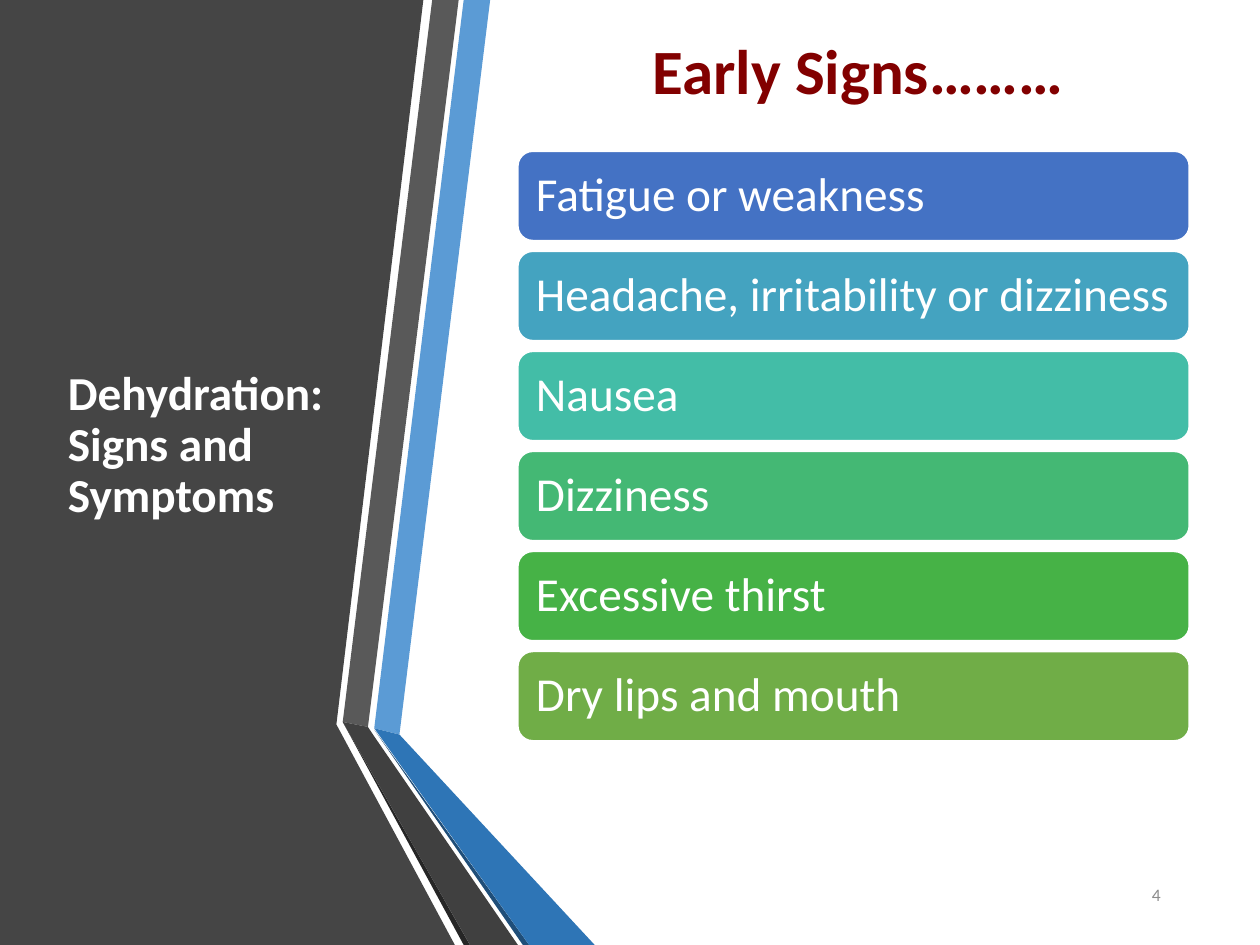
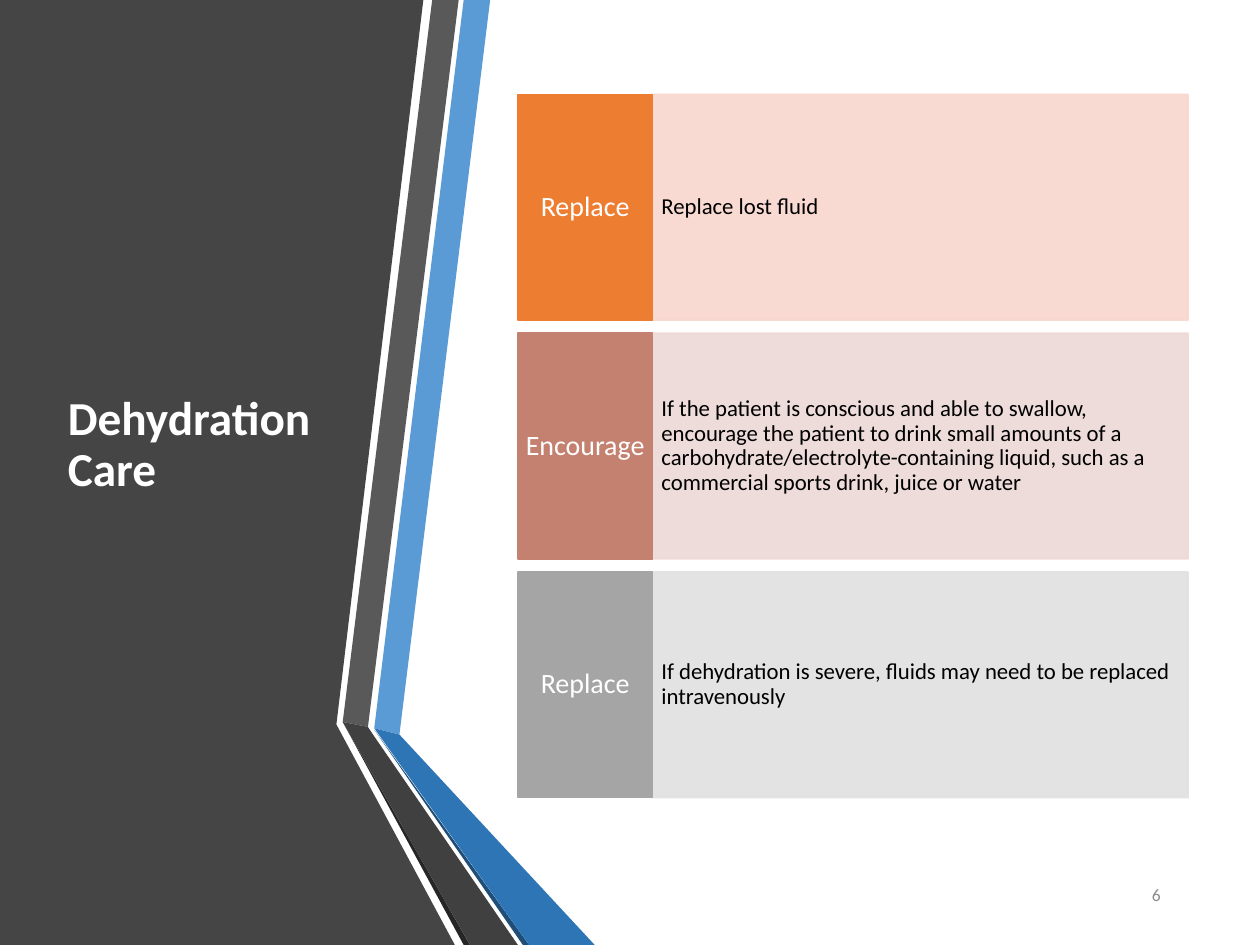
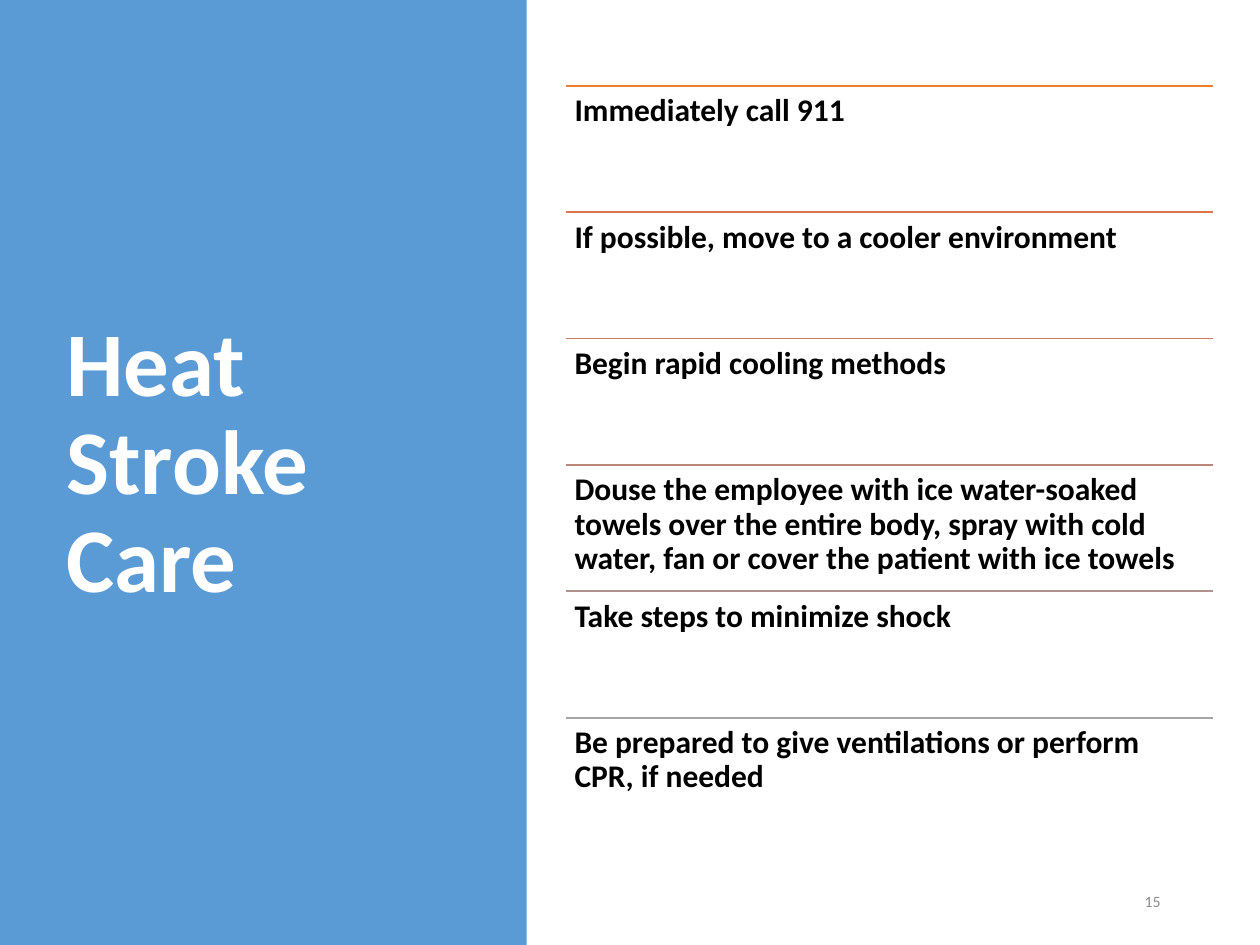
from dataclasses import dataclass

from lxml.etree import SubElement
from pptx import Presentation
from pptx.dml.color import RGBColor
from pptx.enum.shapes import MSO_CONNECTOR, MSO_SHAPE
from pptx.enum.text import MSO_ANCHOR, PP_ALIGN
from pptx.oxml.ns import qn
from pptx.util import Inches, Pt


@dataclass(frozen=True)
class Theme:
    font: str = "Calibri"
    white: str = "FFFFFF"
    black: str = "000000"
    gray: str = "8C8C8C"
    dark: str = "454545"
    blue: str = "5B9BD5"
    red: str = "820000"
    head: int = 36
    title: int = 27
    large: int = 52
    sign: int = 27
    label: int = 16
    note: int = 13
    step: int = 18


look = Theme()


def write(shape, text, size, color, inset=(0.1, 0.05), bold=False,
          align=PP_ALIGN.LEFT, anchor=MSO_ANCHOR.MIDDLE, space=0.9):
    frame = shape.text_frame
    frame.word_wrap = True
    frame.vertical_anchor = anchor
    frame.margin_left = frame.margin_right = Inches(inset[0])
    frame.margin_top = frame.margin_bottom = Inches(inset[1])
    para = frame.paragraphs[0]
    para.text = text
    para.alignment = align
    para.line_spacing = space
    para.font.name = look.font
    para.font.size = Pt(size)
    para.font.bold = bold
    para.font.color.rgb = RGBColor.from_string(color)


def paint(shape, fill, line=None, alpha=None):
    shape.shadow.inherit = False
    shape.fill.solid()
    shape.fill.fore_color.rgb = RGBColor.from_string(fill)
    if line:
        shape.line.color.rgb = RGBColor.from_string(line)
        shape.line.width = Pt(1)
    else:
        shape.line.fill.background()
    if alpha:
        for tint in shape._element.spPr.iter(qn("a:srgbClr")):
            SubElement(tint, qn("a:alpha")).set("val", str(alpha * 1000))


deck = Presentation()
deck.slide_width, deck.slide_height = Inches(10), Inches(7.5)
signs, care, stroke = [deck.slides.add_slide(deck.slide_layouts[6])
                       for _ in range(3)]

# Dark panel and folded ribbons on the two dehydration slides
bands = [
    (look.dark, [(0, 0), (3.36, 0), (2.67, 5.75), (3.61, 7.5), (0, 7.5)]),
    (look.blue, [(2.97, 5.78), (3.17, 5.83), (3.89, 0), (3.68, 0)]),
    ("595959", [(3.64, 0), (3.43, 0), (2.72, 5.73), (2.92, 5.77)]),
    ("262626", [(2.72, 5.73), (3.68, 7.5), (3.73, 7.5)]),
    ("1F4E79", [(2.97, 5.79), (4.15, 7.5), (4.2, 7.5)]),
    ("2E75B6", [(2.97, 5.78), (4.2, 7.5), (4.72, 7.5), (3.17, 5.83)]),
    ("404040", [(4.11, 7.5), (2.96, 5.83), (2.92, 5.77), (2.72, 5.73),
                (3.73, 7.5)]),
]
for slide in (signs, care):
    for color, points in bands:
        spots = [(Inches(x), Inches(y)) for x, y in points]
        pen = slide.shapes.build_freeform(*spots[0])
        pen.add_line_segments(spots[1:])
        paint(pen.convert_to_shape(), color)

# Blue panel on the heat stroke slide
panel = stroke.shapes.add_shape(MSO_SHAPE.RECTANGLE, 0, 0, Inches(4.18),
                                deck.slide_height)
paint(panel, look.blue)

# Titles and page numbers
tall, wide = (0.44, 0.75, 2.28, 5.58), (0.43, 0.68, 3.12, 6.02)
foot, low = (8.42, 6.9, 0.89, 0.4), (7.06, 6.95, 2.25, 0.4)
for slide, title, size, spot, page, small, base in [
    (signs, "Dehydration: Signs and Symptoms", look.title, tall, "4", 10, foot),
    (care, "Dehydration Care", look.title, tall, "6", 10, foot),
    (stroke, "Heat Stroke Care", look.large, wide, "15", 9, low),
]:
    box = slide.shapes.add_textbox(*map(Inches, spot))
    write(box, title, size, look.white, bold=True)
    box = slide.shapes.add_textbox(*map(Inches, base))
    write(box, page, small, look.gray, align=PP_ALIGN.RIGHT, space=1)

# Early signs: a stack of rounded bars
box = signs.shapes.add_textbox(Inches(5.08), Inches(0.2), Inches(3.5),
                               Inches(0.71))
write(box, "Early Signs………", look.head, look.red, bold=True,
      anchor=MSO_ANCHOR.TOP, space=1)
bars = [
    ("Fatigue or weakness", "4472C4"),
    ("Headache, irritability or dizziness", "44A3C0"),
    ("Nausea", "43BDA7"),
    ("Dizziness", "44B874"),
    ("Excessive thirst", "46B246"),
    ("Dry lips and mouth", "70AD47"),
]
pitch = (5.17 - 1.2) / (len(bars) - 1)
for i, (text, color) in enumerate(bars):
    bar = signs.shapes.add_shape(
        MSO_SHAPE.ROUNDED_RECTANGLE, Inches(4.11), Inches(1.2 + i * pitch),
        Inches(5.33), Inches(0.71))
    paint(bar, color, look.white)
    write(bar, text, look.sign, look.white, inset=(0.11, 0.1))

# Dehydration care: a label and a note in each row
rows = [
    ("Replace", "ED7D31", "F8D7CE", "Replace lost fluid"),
    ("Encourage", "C48170", "EDD9D7",
     "If the patient is conscious and able to swallow, encourage the patient "
     "to drink small amounts of a carbohydrate/electrolyte-containing liquid, "
     "such as a commercial sports drink, juice or water"),
    ("Replace", "A5A5A5", "E1E1E1",
     "If dehydration is severe, fluids may need to be replaced intravenously"),
]
high = 1.79
pitch = (5.58 - high) / (len(rows) - 1)
for i, (label, color, pale, note) in enumerate(rows):
    top = Inches(0.75 + i * pitch)
    cell = care.shapes.add_shape(MSO_SHAPE.RECTANGLE, Inches(5.17), top,
                                 Inches(4.26), Inches(high))
    paint(cell, pale, pale, alpha=90)
    write(cell, note, look.note, look.black, inset=(0.08, 0.45))
    cell = care.shapes.add_shape(MSO_SHAPE.RECTANGLE, Inches(4.11), top,
                                 Inches(1.07), Inches(high))
    paint(cell, color, color)
    write(cell, label, look.label, look.white, inset=(0.05, 0.18),
          align=PP_ALIGN.CENTER)

# Heat stroke care: ruled steps
steps = [
    ("Immediately call 911", "ED7D31"),
    ("If possible, move to a cooler environment", "DC7A4B"),
    ("Begin rapid cooling methods", "CC7D64"),
    ("Douse the employee with ice water-soaked towels over the entire body, "
     "spray with cold water, fan or cover the patient with ice towels",
     "BD867B"),
    ("Take steps to minimize shock", "B09391"),
    ("Be prepared to give ventilations or perform CPR, if needed", "A5A5A5"),
]
pitch = 6.02 / len(steps)
left, width = Inches(4.49), Inches(5.14)
for i, (text, color) in enumerate(steps):
    top = Inches(0.68 + i * pitch)
    rule = stroke.shapes.add_connector(MSO_CONNECTOR.STRAIGHT, left, top,
                                       left + width, top)
    rule.line.color.rgb = RGBColor.from_string(color)
    rule.line.width = Pt(1)
    SubElement(rule._element.spPr, qn("a:effectLst"))
    box = stroke.shapes.add_textbox(left, top, width, Inches(pitch))
    write(box, text, look.step, look.black, inset=(0.07, 0.07), bold=True,
          anchor=MSO_ANCHOR.TOP)

deck.save("out.pptx")
